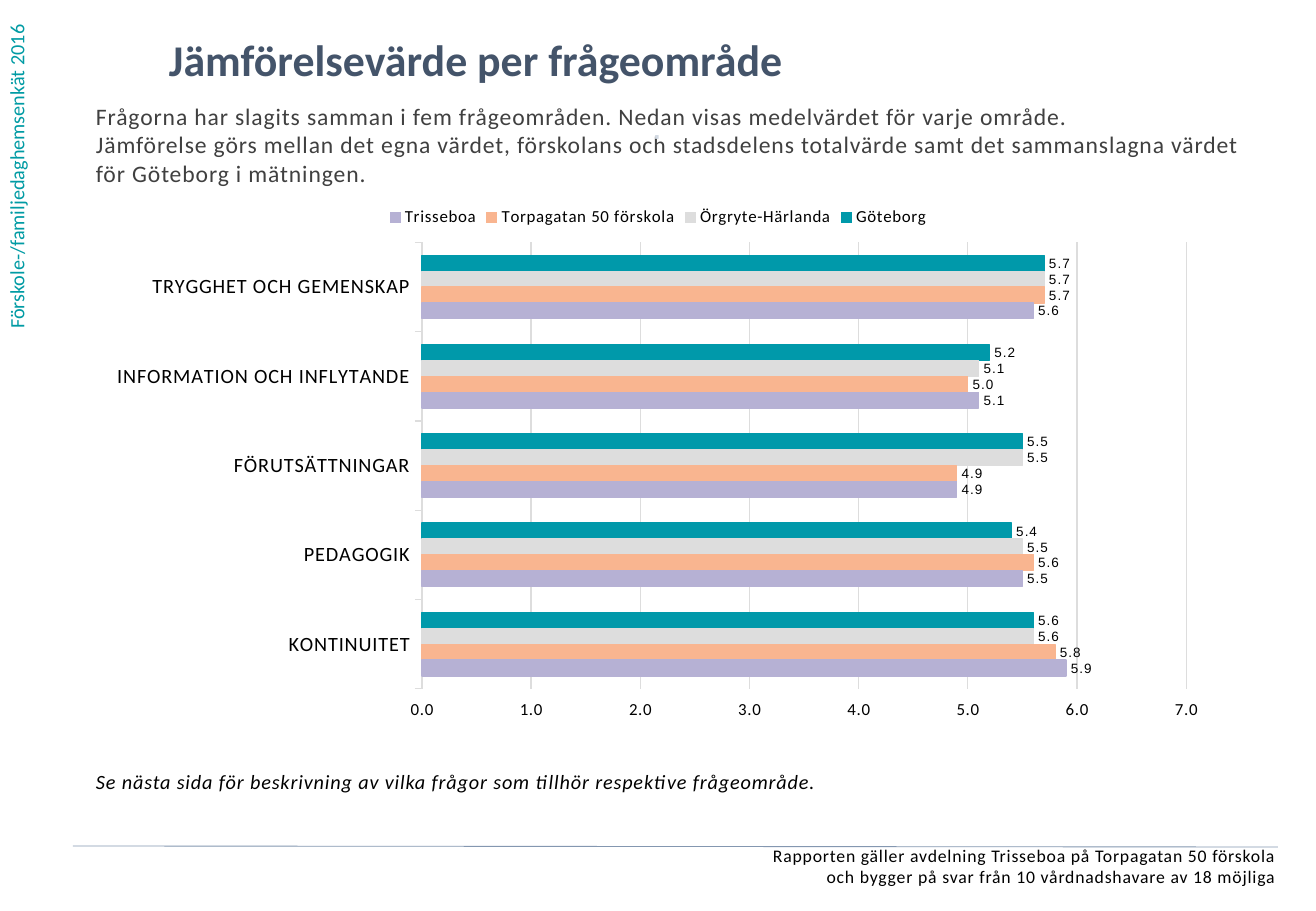
from lxml import etree
from pptx import Presentation
from pptx.chart.data import CategoryChartData
from pptx.dml.color import RGBColor
from pptx.enum.chart import (XL_CHART_TYPE, XL_LABEL_POSITION, XL_LEGEND_POSITION,
                             XL_TICK_LABEL_POSITION, XL_TICK_MARK)
from pptx.enum.shapes import MSO_CONNECTOR
from pptx.enum.text import PP_ALIGN
from pptx.oxml.ns import qn
from pptx.util import Pt

BAR = XL_CHART_TYPE.BAR_CLUSTERED
LABELS_HIGH = XL_TICK_LABEL_POSITION.HIGH
OUTSIDE_END = XL_LABEL_POSITION.OUTSIDE_END
LEGEND_TOP = XL_LEGEND_POSITION.TOP
TICK_OUT, TICK_NONE = XL_TICK_MARK.OUTSIDE, XL_TICK_MARK.NONE
STRAIGHT = MSO_CONNECTOR.STRAIGHT
LEFT, CENTER, RIGHT = PP_ALIGN.LEFT, PP_ALIGN.CENTER, PP_ALIGN.RIGHT

SCALE = 7526
COLORS = {"teal": "009BA4", "title": "44546A", "body": "404040", "black": "000000",
          "dot": "D2D9E2", "rule": "8497B0", "grid": "DDDDDD", "city": "0099AA",
          "district": "DDDDDD", "school": "F9B590", "unit": "B6B1D4"}
NUMBER_FORMAT = "0.0;0.0"
AREAS = ["TRYGGHET OCH GEMENSKAP", "INFORMATION OCH INFLYTANDE", "FÖRUTSÄTTNINGAR",
         "PEDAGOGIK", "KONTINUITET"]
SERIES = [("Göteborg", "city", (5.7, 5.2, 5.5, 5.4, 5.6)),
          ("Örgryte-Härlanda", "district", (5.7, 5.1, 5.5, 5.5, 5.6)),
          ("Torpagatan 50 förskola", "school", (5.7, 5.0, 4.9, 5.6, 5.8)),
          ("Trisseboa", "unit", (5.6, 5.1, 4.9, 5.5, 5.9))]
INTRO = ["Frågorna har slagits samman i fem frågeområden. Nedan visas medelvärdet för varje område.",
         "Jämförelse görs mellan det egna värdet, förskolans och stadsdelens totalvärde samt "
         "det sammanslagna värdet för Göteborg i mätningen."]
FOOTER = ["Rapporten gäller avdelning Trisseboa på Torpagatan 50 förskola",
          "och bygger på svar från 10 vårdnadshavare av 18 möjliga"]


def px(*lengths):
    """Turn px lengths into EMU."""
    return [n * SCALE for n in lengths]


def rgb(name):
    """Look up a named colour."""
    return RGBColor.from_string(COLORS[name])


class SlideBuilder:
    """Hold the style and the current slide."""

    def __init__(self, prs, font="Calibri"):
        """Add a blank slide."""
        self.slide = prs.slides.add_slide(prs.slide_layouts[6])
        self.font = font

    def style(self, font, size, color="black", **formats):
        """Apply format values to a font."""
        formats = {"name": self.font, "size": Pt(size), **formats}
        for key, value in formats.items():
            setattr(font, key, value)
        font.color.rgb = rgb(color)

    def text(self, box, lines, size, color="black", align=LEFT, spacing=0, vert=None, **formats):
        """Add a text box with one paragraph per line."""
        tf = self.slide.shapes.add_textbox(*px(*box)).text_frame
        for side in ("left", "top", "right", "bottom"):
            setattr(tf, f"margin_{side}", 0)
        tf.word_wrap = True
        if vert:
            tf._txBody.bodyPr.set("vert", vert)
        for i, line in enumerate(lines):
            p = tf.add_paragraph() if i else tf.paragraphs[0]
            p.alignment = align
            r = p.add_run()
            r.text = line
            self.style(r.font, size, color, **formats)
            r._r.get_or_add_rPr().set("spc", str(spacing))

    def line(self, ends, color, width):
        """Add a straight line."""
        s = self.slide.shapes.add_connector(STRAIGHT, *px(*ends))
        s.line.color.rgb = rgb(color)
        s.line.width = Pt(width)
        etree.SubElement(s._element.spPr, qn("a:effectLst"))

    def outline(self, line, color):
        """Set a thin chart line."""
        line.color.rgb = rgb(color)
        line.width = Pt(0.75)

    def bar_chart(self, box, categories, series, layout, spacing):
        """Add a clustered bar chart with its first category on top."""
        data = CategoryChartData()
        data.categories = categories
        for name, _, values in series:
            data.add_series(name, values)
        chart = self.slide.shapes.add_chart(BAR, *px(*box), data).chart
        self.style(chart.font, 10)
        chart.has_title = False
        chart.has_legend = True
        chart.legend.position = LEGEND_TOP
        chart.legend.include_in_layout = False
        self.style(chart.legend.font, 10)

        axis = chart.category_axis
        axis.reverse_order = True
        axis.major_tick_mark = TICK_OUT
        self.style(axis.tick_labels.font, 12)
        self.outline(axis.format.line, "grid")

        axis = chart.value_axis
        for key, value in {"minimum_scale": 0, "maximum_scale": 7, "major_unit": 1,
                           "has_major_gridlines": True, "major_tick_mark": TICK_NONE,
                           "tick_label_position": LABELS_HIGH}.items():
            setattr(axis, key, value)
        axis.tick_labels.number_format = NUMBER_FORMAT
        axis.tick_labels.number_format_is_linked = False
        self.style(axis.tick_labels.font, 10)
        axis.format.line.fill.background()
        self.outline(axis.major_gridlines.format.line, "grid")

        plot = chart.plots[0]
        plot.gap_width = 162
        plot.vary_by_categories = False
        for bars, (_, color, _) in zip(plot.series, series):
            bars.format.fill.solid()
            bars.format.fill.fore_color.rgb = rgb(color)
            self.outline(bars.format.line, color)
            labels = bars.data_labels
            for key, value in {"show_value": True, "number_format": NUMBER_FORMAT,
                               "number_format_is_linked": False,
                               "position": OUTSIDE_END}.items():
                setattr(labels, key, value)
            self.style(labels.font, 8, name="Arial")

        root = chart.element
        for props in root.iter(qn("a:defRPr")):
            props.set("spc", str(spacing))
        area = root.find(".//" + qn("c:plotArea"))
        for old in area.findall(qn("c:layout")):
            area.remove(old)
        node = etree.Element(qn("c:layout"))
        area.insert(0, node)
        manual = etree.SubElement(node, qn("c:manualLayout"))
        for tag, value in layout.items():
            etree.SubElement(manual, qn(f"c:{tag}")).set("val", str(value))


def main():
    """Build the slide."""
    prs = Presentation()
    prs.slide_width, prs.slide_height = px(1316, 911)
    sp = SlideBuilder(prs)
    sp.text((4, 0, 25, 329), ["Förskole-/familjedaghemsenkät 2016"], 12, "teal", vert="vert270")
    sp.text((169, 33, 1013, 69), ["Jämförelsevärde per frågeområde"], 26, "title", bold=True)
    sp.text((96, 102, 1149, 90), INTRO, 14, "body", spacing=50)
    sp.text((470, 124, 374, 47), ["⋅"], 12, "dot", CENTER, 50, bold=True)
    sp.bar_chart((96, 194, 1124, 538), AREAS, SERIES,
                 {"layoutTarget": "inner", "xMode": "edge", "yMode": "edge",
                  "x": 0.29, "y": 0.09, "w": 0.68, "h": 0.83}, 50)
    sp.text((96, 769, 1124, 30),
            ["Se nästa sida för beskrivning av vilka frågor som tillhör respektive frågeområde."],
            12, spacing=50, italic=True)
    sp.line((73, 846, 1278, 847), "rule", 0.5)
    sp.text((15, 845, 1261, 52), FOOTER, 10.5, align=RIGHT, spacing=50)
    prs.save("out.pptx")


if __name__ == "__main__":
    main()
